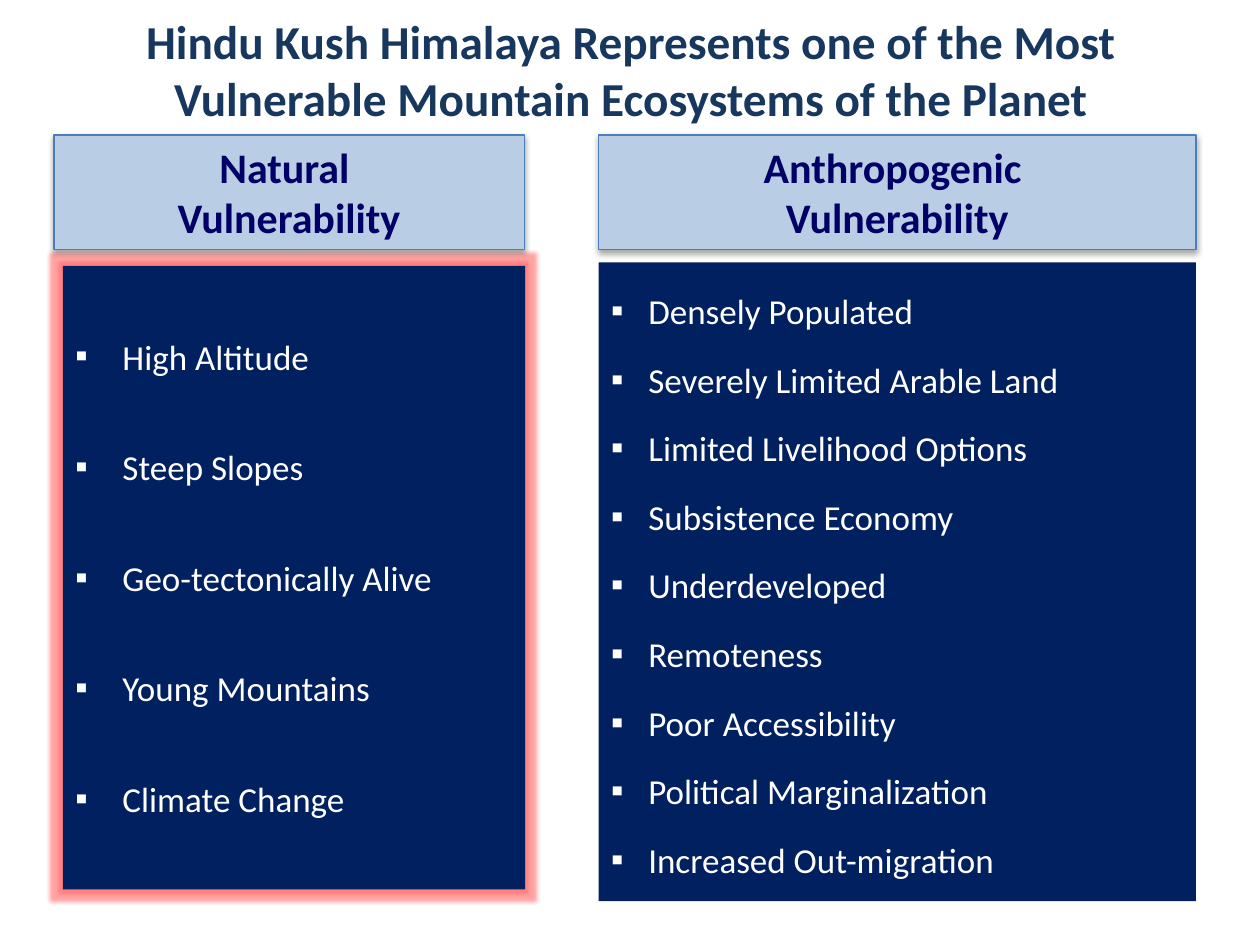
import lxml.etree
import pptx
import pptx.dml.color
import pptx.enum.shapes
import pptx.enum.text
import pptx.oxml
import pptx.oxml.ns
import pptx.util

Cm = pptx.util.Cm
Pt = pptx.util.Pt
RGBColor = pptx.dml.color.RGBColor
ALIGN = pptx.enum.text.PP_ALIGN
ANCHOR = pptx.enum.text.MSO_ANCHOR

NAVY = RGBColor(0x00, 0x20, 0x60)
PALE_BLUE = RGBColor(0xB9, 0xCD, 0xE5)
EDGE_BLUE = RGBColor(0x4B, 0x7E, 0xBC)
HEADING_BLUE = RGBColor(0x00, 0x00, 0x66)
TITLE_BLUE = RGBColor(0x17, 0x37, 0x5E)
WHITE = RGBColor(0xFF, 0xFF, 0xFF)

NAMESPACE = pptx.oxml.ns.nsdecls("a")
SHADOW = (
    f'<a:outerShdw {NAMESPACE} blurRad="40000" dist="23000" dir="5400000" '
    'rotWithShape="0"><a:srgbClr val="000000"><a:alpha val="35000"/>'
    "</a:srgbClr></a:outerShdw>"
)
GLOW = (
    f'<a:glow {NAMESPACE} rad="63500"><a:srgbClr val="FF6666">'
    '<a:alpha val="60000"/></a:srgbClr></a:glow>'
)


def add_effect(shape, effect_xml):
    effects = shape._element.spPr.find(pptx.oxml.ns.qn("a:effectLst"))
    effects.append(pptx.oxml.parse_xml(effect_xml))


def add_box(slide, box, fill):
    rectangle = pptx.enum.shapes.MSO_SHAPE.RECTANGLE
    shape = slide.shapes.add_shape(rectangle, *map(Cm, box))
    shape.shadow.inherit = False
    shape.fill.solid()
    shape.fill.fore_color.rgb = fill
    shape.line.fill.background()
    return shape


def write_text(shape, lines, size, color, bold=False, align=ALIGN.LEFT,
               anchor=ANCHOR.TOP):
    text_frame = shape.text_frame
    text_frame.word_wrap = True
    text_frame.vertical_anchor = anchor
    text_frame.text = "\n".join(lines)
    for paragraph in text_frame.paragraphs:
        paragraph.alignment = align
        for run in paragraph.runs:
            run.font.name = "Calibri"
            run.font.size = Pt(size)
            run.font.bold = bold
            run.font.color.rgb = color


def add_title(slide, box, text):
    shape = slide.shapes.add_textbox(*map(Cm, box))
    write_text(shape, [text], 27, TITLE_BLUE, True, ALIGN.CENTER, ANCHOR.MIDDLE)


def add_heading(slide, box, lines):
    shape = add_box(slide, box, PALE_BLUE)
    shape.line.color.rgb = EDGE_BLUE
    shape.line.width = Pt(0.75)
    add_effect(shape, SHADOW)
    write_text(shape, lines, 24, HEADING_BLUE, True, ALIGN.CENTER)


def add_bullet_panel(slide, box, items, line_spacing, indent, glow=False):
    shape = add_box(slide, box, NAVY)
    if glow:
        add_effect(shape, GLOW)
    write_text(shape, items, 20, WHITE)
    for paragraph in shape.text_frame.paragraphs:
        paragraph.line_spacing = line_spacing
        paragraph.space_before = Pt(3.2)
        properties = paragraph._p.get_or_add_pPr()
        properties.set("marL", str(Cm(indent)))
        properties.set("indent", str(-Cm(indent)))
        font = lxml.etree.SubElement(properties, pptx.oxml.ns.qn("a:buFont"))
        font.set("typeface", "Wingdings")
        bullet = lxml.etree.SubElement(properties, pptx.oxml.ns.qn("a:buChar"))
        bullet.set("char", "▪")
        font.set("typeface", "Calibri")


def main():
    presentation = pptx.Presentation()
    presentation.slide_width = Cm(25.4)
    presentation.slide_height = Cm(19.05)
    slide = presentation.slides.add_slide(presentation.slide_layouts[6])

    # Bullet panels
    add_bullet_panel(
        slide, (1.27, 5.36, 9.32, 12.57),
        ["High Altitude", "Steep Slopes", "Geo-tectonically Alive",
         "Young Mountains", "Climate Change"],
        line_spacing=2.5, indent=0.95, glow=True)
    add_bullet_panel(
        slide, (12.07, 5.29, 12.04, 12.88),
        ["Densely Populated", "Severely Limited Arable Land",
         "Limited Livelihood Options", "Subsistence Economy",
         "Underdeveloped", "Remoteness", "Poor Accessibility",
         "Political Marginalization", "Increased Out-migration"],
        line_spacing=1.5, indent=0.75)

    # Column headings
    add_heading(slide, (1.09, 2.72, 9.48, 2.31), ["Natural ", "Vulnerability"])
    add_heading(slide, (12.07, 2.72, 12.04, 2.31),
                ["Anthropogenic ", "Vulnerability"])

    # Title
    add_title(slide, (1.07, -0.2, 23.29, 3.18),
              "Hindu Kush Himalaya Represents one of the Most "
              "Vulnerable Mountain Ecosystems of the Planet")

    presentation.save("out.pptx")


if __name__ == "__main__":
    main()
